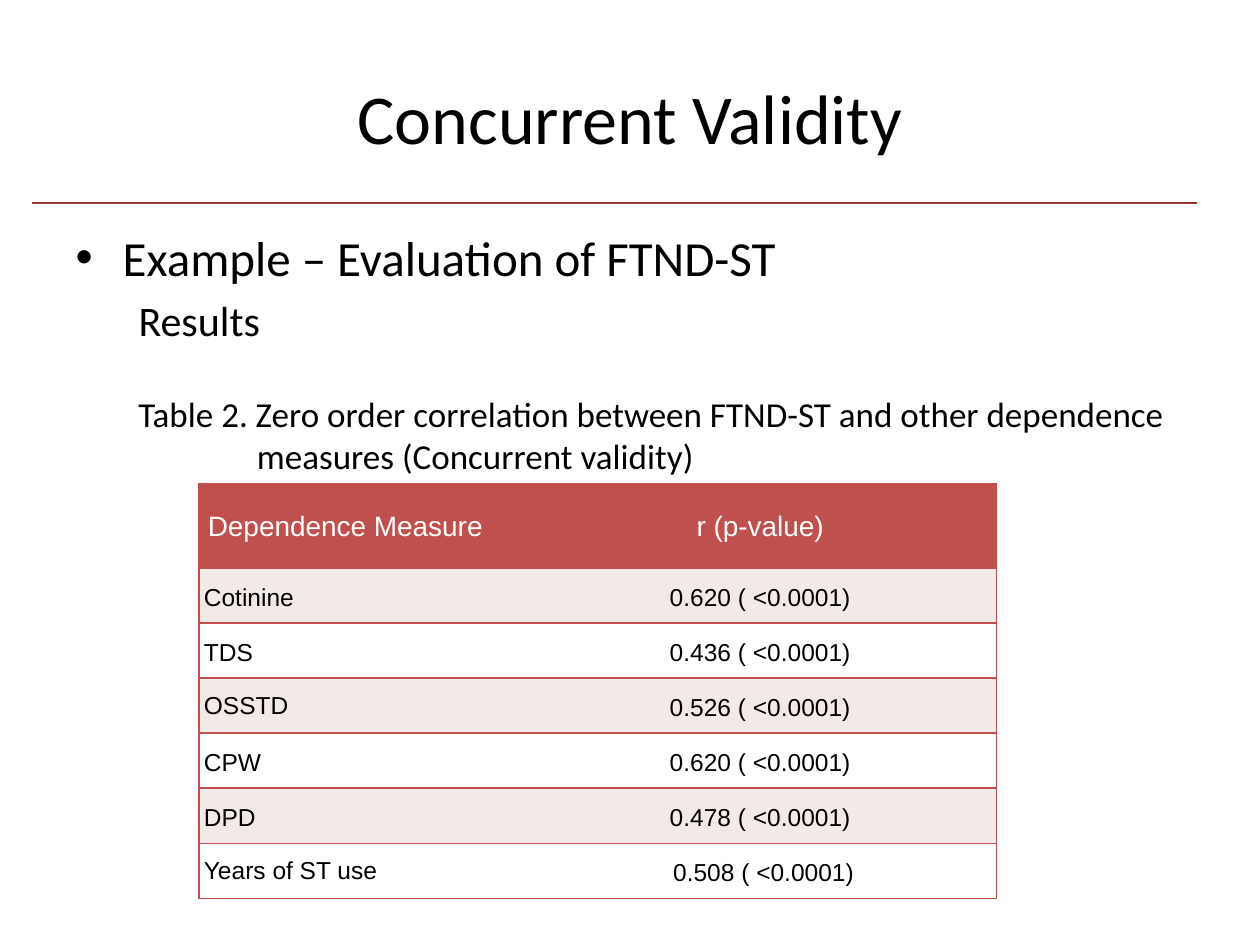
from lxml.etree import SubElement
from pptx import Presentation
from pptx.dml.color import RGBColor
from pptx.enum.shapes import MSO_CONNECTOR
from pptx.enum.text import MSO_ANCHOR, MSO_AUTO_SIZE, PP_ALIGN
from pptx.oxml.ns import qn
from pptx.util import Cm, Pt

COLORS = {
    "rule": "953735",
    "header": "C0504D",
    "band": "F4E9E9",
    "white": "FFFFFF",
    "black": "000000",
}


def add_run(paragraph, text, size, font="Calibri", color="black"):
    run = paragraph.add_run()
    run.text = text
    run.font.size = Pt(size)
    run.font.name = font
    run.font.bold = False
    run.font.color.rgb = RGBColor.from_string(COLORS[color])


def add_border(cell, side, visible):
    line = SubElement(cell._tc.get_or_add_tcPr(), qn(f"a:ln{side}"), w=str(Pt(1)))
    if visible:
        fill = SubElement(line, qn("a:solidFill"))
        SubElement(fill, qn("a:srgbClr"), val=COLORS["header"])
    else:
        SubElement(line, qn("a:noFill"))


prs = Presentation()
prs.slide_width, prs.slide_height = Cm(25.4), Cm(19.05)
slide = prs.slides.add_slide(prs.slide_layouts[1])

# Rule under the title
rule = slide.shapes.add_connector(
    MSO_CONNECTOR.STRAIGHT, Cm(0.64), Cm(4.09), Cm(24.13), Cm(4.09))
rule.line.color.rgb = RGBColor.from_string(COLORS["rule"])
rule.line.width = Pt(1.5)
SubElement(rule._element.spPr, qn("a:effectLst"))

# Title
title = slide.shapes.title
title.left, title.top, title.width, title.height = Cm(1.27), Cm(0.76), Cm(22.86), Cm(3.18)
title.text_frame.vertical_anchor = MSO_ANCHOR.MIDDLE
heading = title.text_frame.paragraphs[0]
heading.alignment = PP_ALIGN.CENTER
add_run(heading, "Concurrent Validity", 40)

# Example and its sub-heading
body = slide.placeholders[1]
body.left, body.top, body.width, body.height = Cm(1.27), Cm(4.45), Cm(22.86), Cm(12.57)
body.text_frame.auto_size = MSO_AUTO_SIZE.NONE
example = body.text_frame.paragraphs[0]
example_format = example._p.get_or_add_pPr()
example_format.set("marL", str(Cm(0.95)))
example_format.set("indent", str(Cm(-0.95)))
SubElement(example_format, qn("a:buChar"), char="•")
example.space_before = Pt(0)
add_run(example, "Example – Evaluation of FTND-ST", 28)

results = body.text_frame.add_paragraph()
results.level = 1
results_format = results._p.get_or_add_pPr()
results_format.set("marL", str(Cm(1.27)))
results_format.set("indent", "0")
SubElement(results_format, qn("a:buNone"))
results.space_before = Pt(4.8)
add_run(results, "Results", 24)

# Table caption with a hanging indent
caption = slide.shapes.add_textbox(Cm(2.54), Cm(7.77), Cm(21.59), Cm(1.96)).text_frame
caption.word_wrap = True
caption.auto_size = MSO_AUTO_SIZE.SHAPE_TO_FIT_TEXT
caption.vertical_anchor = MSO_ANCHOR.MIDDLE
caption_line = caption.paragraphs[0]
caption_format = caption_line._p.get_or_add_pPr()
caption_format.set("marL", str(Cm(2.39)))
caption_format.set("indent", str(Cm(-2.39)))
add_run(caption_line, "Table 2. Zero order correlation between FTND-ST and other "
        "dependence measures (Concurrent validity)", 20)

# Correlation table
correlations = [
    ("Dependence Measure", "r (p-value)"),
    ("Cotinine", "0.620 ( <0.0001)"),
    ("TDS", "0.436 ( <0.0001)"),
    ("OSSTD", "0.526 ( <0.0001)"),
    ("CPW", "0.620 ( <0.0001)"),
    ("DPD", "0.478 ( <0.0001)"),
    ("Years of ST use", " 0.508 ( <0.0001)"),
]
single_spaced = ("OSSTD", "Years of ST use")
table = slide.shapes.add_table(
    len(correlations), 2, Cm(4.01), Cm(9.75), Cm(16.08), Cm(8.36)).table
table.first_row = table.horz_banding = False
table.columns[0].width, table.columns[1].width = Cm(6.55), Cm(9.53)

for row, values in enumerate(correlations):
    is_header = row == 0
    table.rows[row].height = Cm(1.7 if is_header else 1.11)
    fill_name = "header" if is_header else ("white", "band")[row % 2]
    for column, value in enumerate(values):
        cell = table.cell(row, column)
        cell.margin_left = cell.margin_right = Cm(0.18 if is_header else 0.1)
        cell.margin_top = cell.margin_bottom = 0
        cell.vertical_anchor = MSO_ANCHOR.MIDDLE
        for side in "LRTB":
            inner = side == ("R", "L")[column]
            add_border(cell, side, not inner)
        cell.fill.solid()
        cell.fill.fore_color.rgb = RGBColor.from_string(COLORS[fill_name])
        entry = cell.text_frame.paragraphs[0]
        entry.alignment = (PP_ALIGN.LEFT, PP_ALIGN.CENTER)[column]
        if value not in single_spaced:
            entry.line_spacing = 1.07 if is_header else 1.15
        add_run(entry, value, 16 if is_header else 14, "Arial",
                "white" if is_header else "black")

prs.save("out.pptx")
